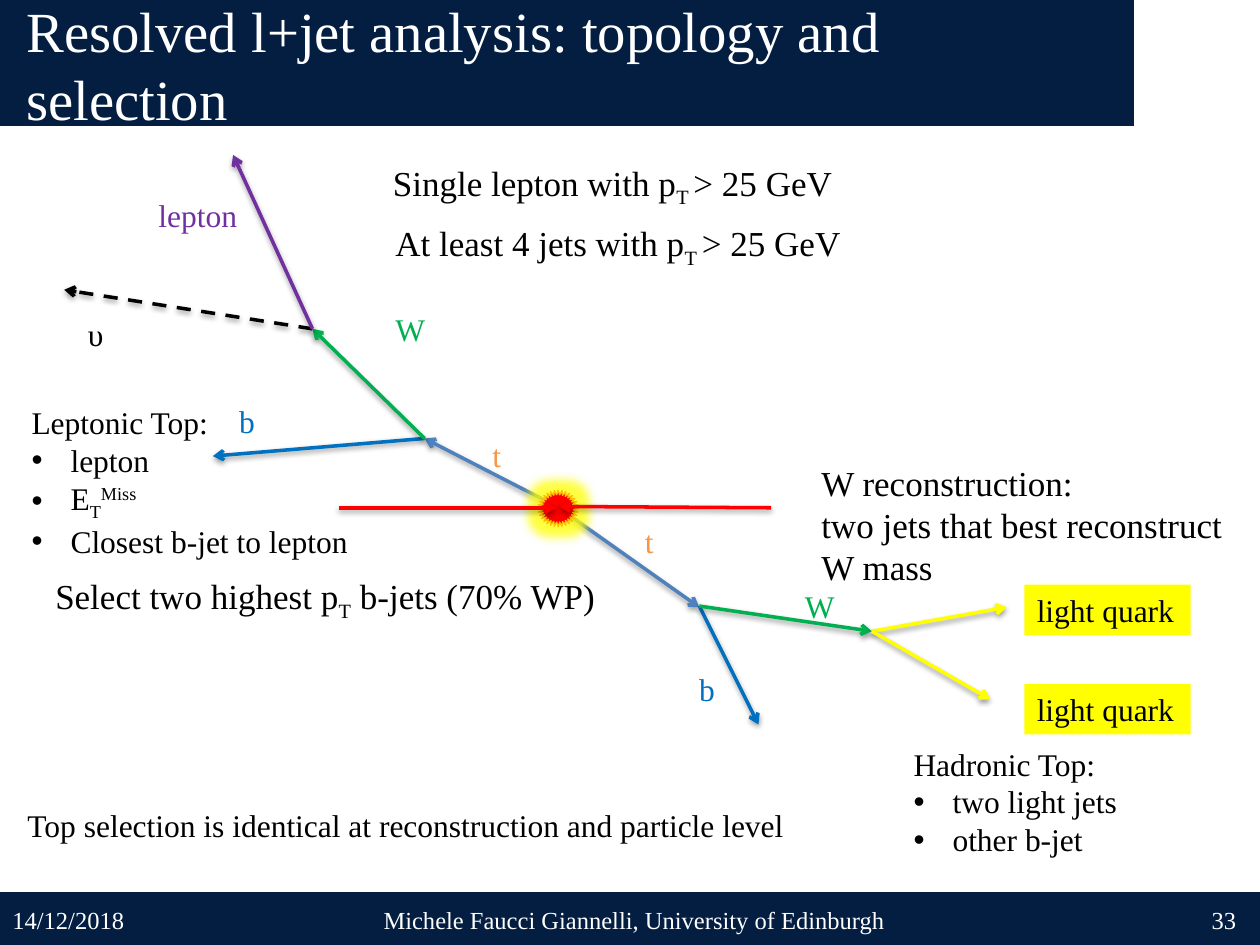
import lxml.etree
import pptx
import pptx.dml.color
import pptx.enum.dml
import pptx.enum.shapes
import pptx.enum.text
import pptx.oxml
import pptx.oxml.ns
import pptx.util

COLORS = {
    "navy": "041E42", "white": "FFFFFF", "black": "000000", "red": "FF0000",
    "top": "4F81BD", "b": "0070C0", "W": "00B050", "lepton": "7030A0",
    "yellow": "FFFF00", "gold": "FFC000", "orange": "F79646",
}
FONT = "Times New Roman"
CELL = 0.1  # inches: the slide is a grid of 100 columns by 75 rows
COLUMNS, ROWS = 100, 75
SUB, SUPER = -25000, 30000
ALIGN = pptx.enum.text.PP_ALIGN
ANCHOR = pptx.enum.text.MSO_ANCHOR
SHAPE = pptx.enum.shapes.MSO_SHAPE

# Decay vertices of the event diagram, as (column, row)
T_LEP, T_HAD = (33.7, 34.8), (55.5, 48.1)
W_LEP, W_HAD = (24.8, 26.1), (69.2, 50.1)
ARROWS = [
    ((44.9, 40.7), (55.5, 48.2), "top"),
    ((44.4, 40.3), T_LEP, "top"),
    (T_HAD, (60.2, 57.5), "b"),
    (T_LEP, (16.9, 36.2), "b"),
    (T_HAD, W_HAD, "W"),
    (T_LEP, W_LEP, "W"),
    (W_LEP, (5.1, 23), "black"),
    (W_HAD, (79.9, 48.2), "yellow"),
    (W_HAD, (78.6, 55.5), "yellow"),
    (W_LEP, (18.5, 12.3), "lepton"),
]
BEAMS = [((26.9, 40.3), (44.1, 40.3), "red"), ((61.2, 40.3), (44.4, 40.2), "red")]
LABELS = [
    ("υ", (6, 24.5, 3.3, 4), "black"),
    ("lepton", (11.6, 15.1, 8.3, 4), "lepton"),
    ("b", (18, 31.4, 3.4, 4), "b"),
    ("b", (54.5, 52.7, 3.4, 4), "b"),
    ("W", (30.4, 24.1, 4.4, 4), "W"),
    ("W", (62.9, 46.1, 4.4, 4), "W"),
    ("t", (38.1, 34.1, 2.7, 4), "orange"),
    ("t", (50.2, 40.9, 2.7, 4), "orange"),
    ("Top selection is identical at reconstruction and particle level",
     (1.2, 63.5, 62.7, 4), "black"),
]
CUTS = [
    (["Single lepton with p", ("T ", SUB), "> 25 GeV"], (30.2, 12.3, 37.3, 4.4)),
    (["At least 4 jets with p", ("T ", SUB), "> 25 GeV"], (30.4, 17.1, 45.4, 4.4)),
    (["Select two highest p", ("T", SUB), " b-jets (70% WP)"], (3.4, 45.1, 45.2, 4.4)),
]
TOPS = [
    ((1.5, 31.5, 27.7, 13.1),
     [["Leptonic Top:"], ["lepton"], ["E", ("T", SUB), ("Miss", SUPER)],
      ["Closest b-jet to lepton"]]),
    ((71.5, 58.6, 19.2, 10.1),
     [["Hadronic Top:"], ["two light jets"], ["other b-jet"]]),
]
FOOTER = [
    ("14/12/2018", (0, 71, 23.3, 4), ALIGN.LEFT),
    ("Michele Faucci Giannelli, University of Edinburgh", (28.7, 71, 43.3, 4), ALIGN.CENTER),
    ("33", (75.8, 71, 23.3, 4), ALIGN.RIGHT),
]


def rgb(color):
    return pptx.dml.color.RGBColor.from_string(COLORS[color])


def cells(*counts):
    return [pptx.util.Inches(n * CELL) for n in counts]


def place(s, box):
    s.left, s.top, s.width, s.height = cells(*box)


def set_effect(s, effect):
    """Replace the effects of s by one effect, given as XML."""
    for old in s._element.spPr.findall(pptx.oxml.ns.qn("a:effectLst")):
        s._element.spPr.remove(old)
    s._element.spPr.append(pptx.oxml.parse_xml(
        f'<a:effectLst {pptx.oxml.ns.nsdecls("a")}>{effect}</a:effectLst>'))


def add_runs(p, runs, size, color):
    """Fill p with runs, each a string or a (string, baseline) pair."""
    for run in runs:
        text, baseline = run if isinstance(run, tuple) else (run, None)
        r = p.add_run()
        r.text = text
        for name, value in {"size": pptx.util.Pt(size), "name": FONT}.items():
            setattr(r.font, name, value)
        r.font.color.rgb = rgb(color)
        if baseline:
            r._r.get_or_add_rPr().set("baseline", str(baseline))


def set_text(s, paragraphs, size, color="black", align=ALIGN.LEFT, anchor=ANCHOR.TOP, wrap=True):
    tf = s.text_frame
    frame = {"word_wrap": wrap, "vertical_anchor": anchor,
             "auto_size": pptx.enum.text.MSO_AUTO_SIZE.NONE}
    for name, value in frame.items():
        setattr(tf, name, value)
    for i, runs in enumerate(paragraphs):
        p = tf.add_paragraph() if i else tf.paragraphs[0]
        p.alignment = align
        p.space_before = pptx.util.Pt(0)
        add_runs(p, runs, size, color)


def add_text(slide, box, paragraphs, size, **options):
    set_text(slide.shapes.add_textbox(*cells(*box)), paragraphs, size, **options)


def add_block(slide, box, fill, shape=SHAPE.RECTANGLE):
    s = slide.shapes.add_shape(shape, *cells(*box))
    s.shadow.inherit = False
    s.fill.solid()
    s.fill.fore_color.rgb = rgb(fill)
    s.line.fill.background()
    return s


def add_arrow(slide, start, end, color, dashed=False):
    s = slide.shapes.add_connector(
        pptx.enum.shapes.MSO_CONNECTOR.STRAIGHT, *cells(*start, *end))
    s.line.color.rgb = rgb(color)
    s.line.width = pptx.util.Pt(2)
    if dashed:
        s.line.dash_style = pptx.enum.dml.MSO_LINE.DASH
    ln = s.line._get_or_add_ln()
    lxml.etree.SubElement(ln, pptx.oxml.ns.qn("a:tailEnd"), type="arrow")
    set_effect(s, '<a:outerShdw blurRad="40000" dist="20000" dir="5400000" rotWithShape="0">'
                  '<a:srgbClr val="000000"><a:alpha val="38000"/></a:srgbClr></a:outerShdw>')


def add_collision(slide):
    s = add_block(slide, (42.7, 38.9, 3.2, 2.9), "red", SHAPE.STAR_32_POINT)
    s.line.color.rgb = rgb("gold")
    s.line.width = pptx.util.Pt(0.75)
    set_effect(s, f'<a:glow rad="139700"><a:srgbClr val="{COLORS["yellow"]}">'
                  '<a:alpha val="75000"/></a:srgbClr></a:glow>')


def fill_list(s, box, paragraphs):
    """Write a heading without a bullet, then bulleted items."""
    place(s, box)
    set_text(s, paragraphs, 18)
    indent = pptx.util.Inches(0.31)
    for i, p in enumerate(s.text_frame.paragraphs):
        pPr = p._p.get_or_add_pPr()
        pPr.set("marL", str(indent if i else 0))
        pPr.set("indent", str(-indent if i else 0))
        bullet = lxml.etree.SubElement(pPr, pptx.oxml.ns.qn("a:buChar" if i else "a:buNone"))
        if i:
            bullet.set("char", "•")


def main():
    prs = pptx.Presentation()
    prs.slide_width, prs.slide_height = cells(COLUMNS, ROWS)
    slide = prs.slides.add_slide(prs.slide_layouts.get_by_name("Two Content"))
    title, *lists = slide.placeholders

    for box in [(0, 70.8, COLUMNS, 4.2), (0, 0, 90, 10)]:
        band = add_block(slide, box, "navy")
        slide.shapes._spTree.insert(2, band._element)
    place(title, (1.1, 0, 86.8, 10.1))
    set_text(title, [["Resolved l+jet analysis: topology and selection"]], 32.4,
             color="white", anchor=ANCHOR.MIDDLE)
    for s, (box, paragraphs) in zip(lists, TOPS):
        fill_list(s, box, paragraphs)

    for start, end, color in ARROWS[:2]:
        add_arrow(slide, start, end, color)
    add_collision(slide)
    for start, end, color in ARROWS[2:] + BEAMS:
        add_arrow(slide, start, end, color, dashed=color == "black")

    for text, box, color in LABELS:
        add_text(slide, box, [[text]], 18, color=color, wrap=False)
    for row in (46.4, 54.3):
        quark = add_block(slide, (81.3, row, 13.2, 4), "yellow")
        set_text(quark, [["light quark"]], 18, wrap=False)
    for runs, box in CUTS:
        add_text(slide, box, [runs], 20, wrap=False)
    add_text(slide, (64.2, 36.1, 34, 11.1),
             [["W reconstruction:"], ["two jets that best reconstruct W mass"]], 20)
    for text, box, align in FOOTER:
        add_text(slide, box, [[text]], 14, color="white", align=align, anchor=ANCHOR.MIDDLE)
    prs.save("out.pptx")


if __name__ == "__main__":
    main()
